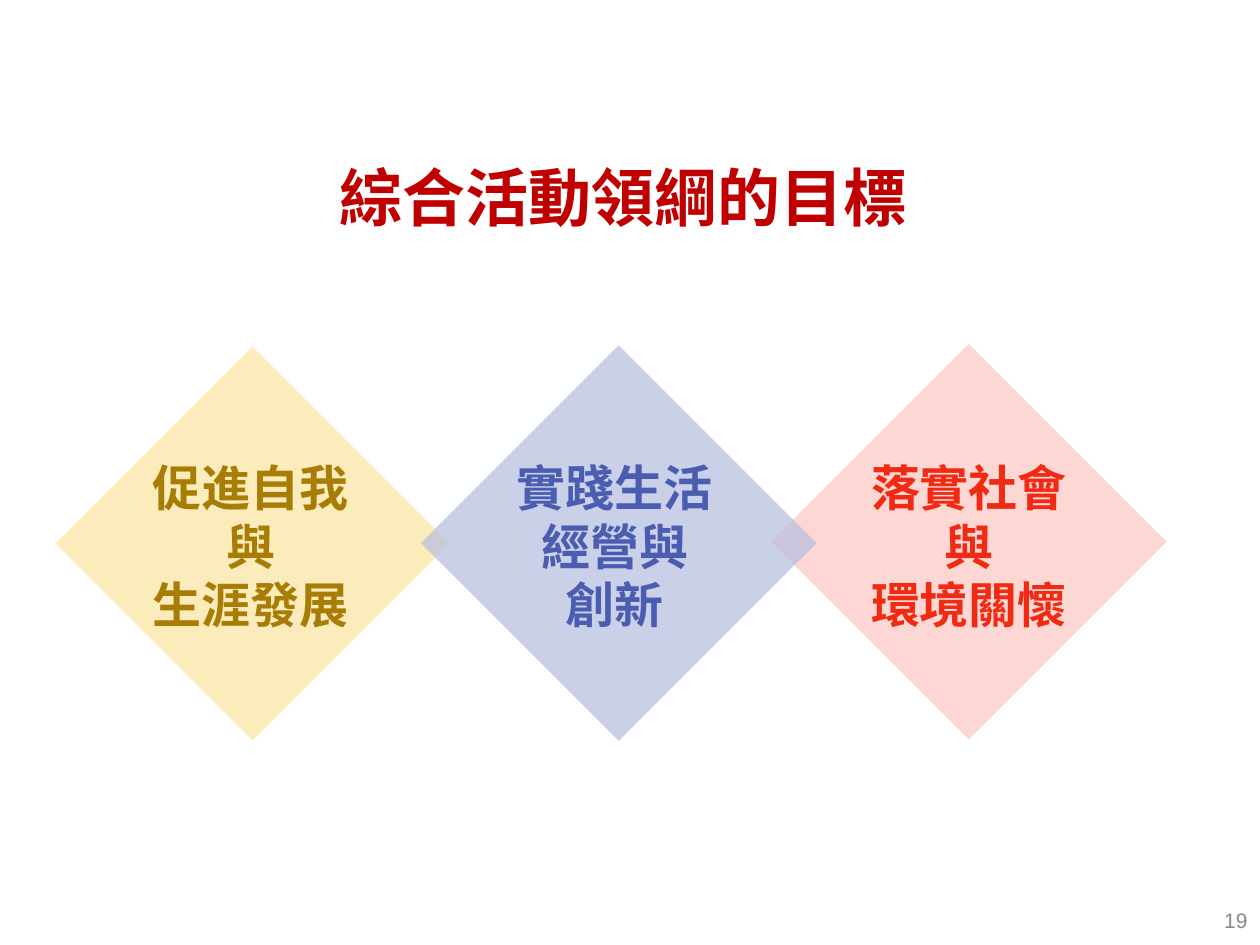
import pptx
import pptx.dml.color
import pptx.enum.shapes
import pptx.enum.text
import pptx.oxml.ns
import pptx.util
from lxml import etree

Inches = pptx.util.Inches
Align = pptx.enum.text.PP_ALIGN
Anchor = pptx.enum.text.MSO_ANCHOR

# Content
HEADING = "綜合活動領綱的目標"
PAGE_NUMBER = "19"
# From back to front: lines, fill, text colour, diamond (left, top, side), rotation, label left
GOALS = [
    (["落實社會與", "環境關懷"], "FBC7C1", "F02A13", (6.58, 3.19, 2.22), 315, 6.67),
    (["促進自我與", "生涯發展"], "FCE49F", "A77D05", (0.9, 3.21, 2.21), 225, 0.97),
    (["實踐生活經營與", "創新"], "B5BDE0", "4B5DB1", (3.8, 3.2, 2.22), 135, 3.86),
]

# Colours, type sizes and shared measures
THEME = {
    "cjk": "Noto Sans CJK SC", "latin": "Arial",
    "heading_size": 36, "goal_size": 28, "page_size": 12,
    "heading_color": "C00000", "page_color": "898989",
    "opacity": 70,
}
LABEL_TOP, LABEL_WIDTH, LABEL_HEIGHT = 3.58, 2.04, 1.51


def set_values(target, values):
    for attribute, value in values.items():
        setattr(target, attribute, value)


def place(box, left, top, width, height):
    set_values(box, {"left": Inches(left), "top": Inches(top),
                     "width": Inches(width), "height": Inches(height)})


def write(box, lines, size, font_name, color, bold=False,
          align=Align.CENTER, anchor=Anchor.TOP, spacing=None):
    frame = box.text_frame
    set_values(frame, {"word_wrap": True, "vertical_anchor": anchor,
                       "auto_size": pptx.enum.text.MSO_AUTO_SIZE.NONE})
    for index, line in enumerate(lines):
        paragraph = frame.add_paragraph() if index else frame.paragraphs[0]
        set_values(paragraph, {"alignment": align, "line_spacing": spacing})
        run = paragraph.add_run()
        run.text = line
        set_values(run.font, {"size": pptx.util.Pt(size), "name": font_name, "bold": bold})
        run.font.color.rgb = pptx.dml.color.RGBColor.from_string(color)
        # East Asian typeface
        etree.SubElement(run.font._element, pptx.oxml.ns.qn("a:ea"), typeface=font_name)


def add_diamond(slide, left, top, side, rotation, color):
    diamond = slide.shapes.add_shape(
        pptx.enum.shapes.MSO_SHAPE.RECTANGLE,
        Inches(left), Inches(top), Inches(side), Inches(side))
    diamond.rotation = rotation
    diamond.shadow.inherit = False
    diamond.line.fill.background()
    diamond.fill.solid()
    diamond.fill.fore_color.rgb = pptx.dml.color.RGBColor.from_string(color)
    # Transparency
    fill_color = diamond._element.spPr.find(".//" + pptx.oxml.ns.qn("a:srgbClr"))
    etree.SubElement(fill_color, pptx.oxml.ns.qn("a:alpha"), val=str(THEME["opacity"] * 1000))


def add_text(slide, left, top, width, height, *args, **options):
    box = slide.shapes.add_textbox(Inches(left), Inches(top), Inches(width), Inches(height))
    write(box, *args, **options)


def main():
    deck = pptx.Presentation()
    set_values(deck, {"slide_width": Inches(10), "slide_height": Inches(7.5)})
    slide = deck.slides.add_slide(deck.slide_layouts[5])

    # Heading
    heading = slide.shapes.title
    place(heading, 1.92, 1.28, 6.05, 0.65)
    write(heading, [HEADING], THEME["heading_size"], THEME["cjk"],
          THEME["heading_color"], bold=True, spacing=0.9)

    # Overlapping diamonds, then their labels
    for _, fill, _, (left, top, side), rotation, _ in GOALS:
        add_diamond(slide, left, top, side, rotation, fill)
    for lines, _, color, _, _, label_left in GOALS:
        add_text(slide, label_left, LABEL_TOP, LABEL_WIDTH, LABEL_HEIGHT,
                 lines, THEME["goal_size"], THEME["cjk"], color, bold=True)

    # Page number
    add_text(slide, 7.75, 7.1, 2.25, 0.4, [PAGE_NUMBER], THEME["page_size"],
             THEME["latin"], THEME["page_color"], align=Align.RIGHT, anchor=Anchor.MIDDLE)

    deck.save("out.pptx")


if __name__ == "__main__":
    main()
